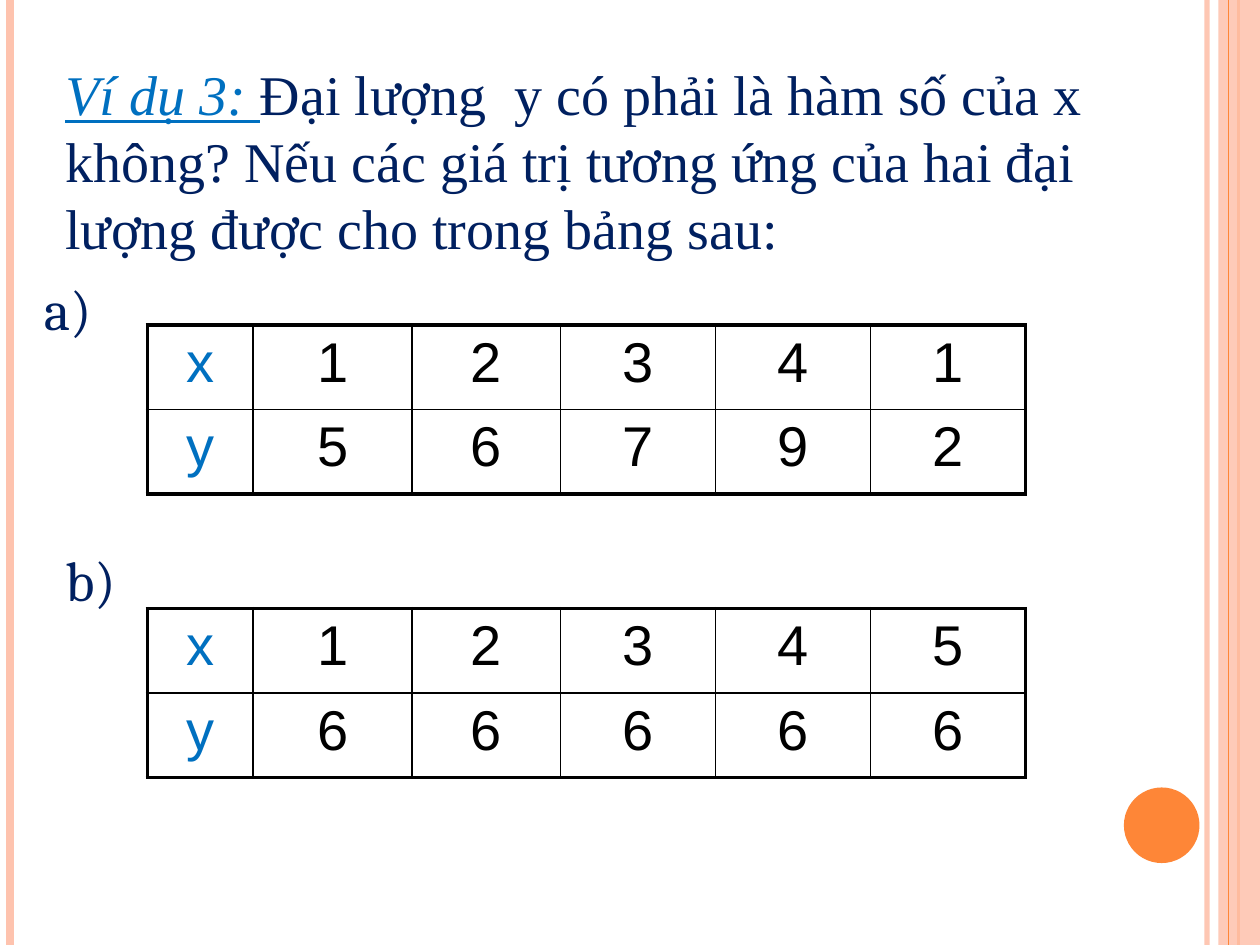
from lxml.etree import SubElement
from pptx import Presentation
from pptx.dml.color import RGBColor as RGB
from pptx.enum.shapes import MSO_CONNECTOR as CONN, MSO_SHAPE as SHAPE
from pptx.enum.text import MSO_AUTO_SIZE as FIT, PP_ALIGN as AL
from pptx.oxml.ns import qn
from pptx.util import Inches, Pt

COLORS = {
    "peach": "FEC3AE",
    "orange": "FE8637",
    "blue": "0070C0",
    "navy": "002060",
    "black": "000000",
}
COL_WIDTHS = [0.84, 1.26, 1.18, 1.23, 1.23, 1.23]
ROW_HEIGHT = 0.67
THIN, THICK = 1, 2.25


class Deck:
    size = 32

    def __init__(self, prs):
        self.s = prs.slides.add_slide(prs.slide_layouts[6])

    def color(self, name):
        return RGB.from_string(COLORS[name])

    def opacity(self, fill, percent):
        clr = fill._xPr.find(qn("a:solidFill"))[0]
        SubElement(clr, qn("a:alpha"), val=str(percent * 1000))

    def rule(self, x, color, width, opacity=100):
        ends = [Inches(v) for v in (x, 0, x, 7.5)]
        c = self.s.shapes.add_connector(CONN.STRAIGHT, *ends)
        c.line.color.rgb = self.color(color)
        c.line.width = Pt(width)
        if opacity < 100:
            self.opacity(c.line.fill, opacity)
        SubElement(c._element.spPr, qn("a:effectLst"))

    def shape(self, kind, box, color, opacity=100):
        sp = self.s.shapes.add_shape(kind, *map(Inches, box))
        sp.shadow.inherit = False
        sp.fill.solid()
        sp.fill.fore_color.rgb = self.color(color)
        sp.line.fill.background()
        if opacity < 100:
            self.opacity(sp.fill, opacity)

    def run(self, p, text, color, **fmt):
        r = p.add_run()
        r.text = text
        r.font.color.rgb = self.color(color)
        for key, value in ({"size": Pt(self.size)} | fmt).items():
            setattr(r.font, key, value)

    def text(self, box, runs):
        tf = self.s.shapes.add_textbox(*map(Inches, box)).text_frame
        tf.word_wrap = True
        tf.auto_size = FIT.SHAPE_TO_FIT_TEXT
        for text, color, fmt in runs:
            self.run(tf.paragraphs[0], text, color, **fmt)

    def borders(self, cell, widths):
        tc_pr = cell._tc.get_or_add_tcPr()
        for i, (side, width) in enumerate(widths.items()):
            ln = tc_pr.makeelement(qn(f"a:ln{side}"), w=str(Pt(width)))
            fill = SubElement(ln, qn("a:solidFill"))
            SubElement(fill, qn("a:srgbClr"), val=COLORS["black"])
            tc_pr.insert(i, ln)

    def table(self, x, y, rows):
        n, m = len(rows), len(COL_WIDTHS)
        box = map(Inches, (x, y, sum(COL_WIDTHS), n * ROW_HEIGHT))
        t = self.s.shapes.add_table(n, m, *box).table
        t.first_row = t.horz_banding = False
        for col, width in zip(t.columns, COL_WIDTHS):
            col.width = Inches(width)
        for i, values in enumerate(rows):
            t.rows[i].height = Inches(ROW_HEIGHT)
            for j, value in enumerate(values):
                cell = t.cell(i, j)
                cell.fill.background()
                p = cell.text_frame.paragraphs[0]
                p.alignment = AL.CENTER
                self.run(p, value, "black" if j else "blue", name="Arial")
                outer = {"L": j == 0, "R": j == m - 1, "T": i == 0, "B": i == n - 1}
                self.borders(cell, {k: THICK if v else THIN for k, v in outer.items()})


def main():
    prs = Presentation()
    prs.slide_width, prs.slide_height = Inches(10), Inches(7.5)
    d = Deck(prs)

    d.rule(9.58, "peach", 3, 93)
    d.rule(0.08, "peach", 4.5)
    d.rule(9.83, "orange", 1.5)
    d.shape(SHAPE.RECTANGLE, (9.67, 0, 0.33, 7.5), "peach", 87)
    d.rule(9.75, "orange", 0.75)
    d.shape(SHAPE.OVAL, (8.92, 6.25, 0.6, 0.6), "orange")

    serif = {"name": "Times New Roman"}
    d.text((0.42, 0.42, 9.08, 1.72), [
        ("Ví dụ 3: ", "blue", serif | {"italic": True, "underline": True}),
        ("Đại lượng  y có phải là hàm số của x không? Nếu các giá trị "
         "tương ứng của hai đại lượng được cho trong bảng sau:", "navy", serif),
    ])

    d.table(1.17, 4.83, ["x12345", "y66666"])
    d.table(1.17, 2.58, ["x12341", "y56792"])
    for label, x, y in (("a)", 0.25, 2.13), ("b)", 0.42, 4.28)):
        d.text((x, y, 0.67, 0.64), [(label, "navy", {"name": "Cambria"})])

    prs.save("out.pptx")


if __name__ == "__main__":
    main()
